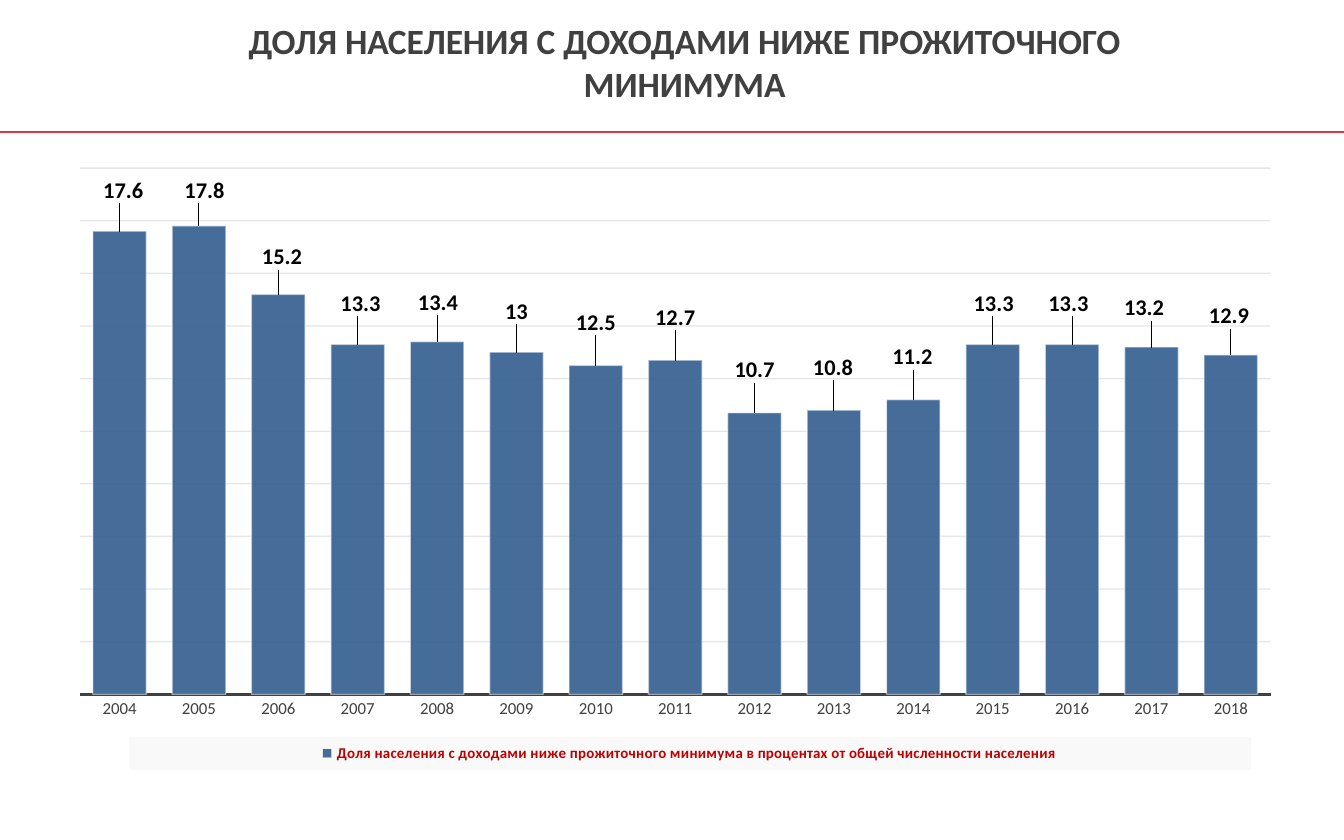
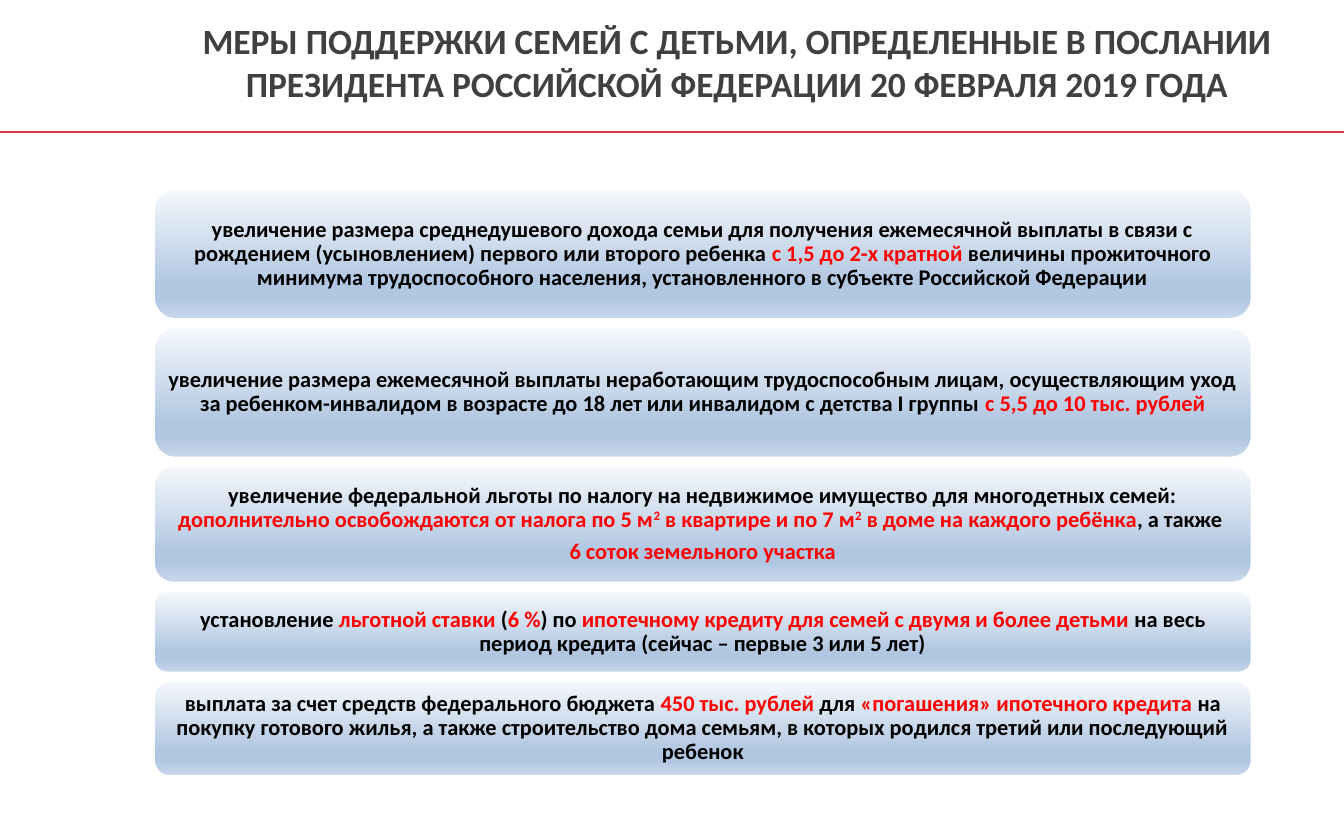
"""Two slides on low incomes and on support for families with children."""
from dataclasses import dataclass

from lxml.etree import SubElement
from pptx import Presentation
from pptx.chart.data import CategoryChartData
from pptx.dml.color import RGBColor
from pptx.enum.chart import XL_CHART_TYPE, XL_LABEL_POSITION, XL_LEGEND_POSITION, XL_TICK_MARK
from pptx.enum.shapes import MSO_CONNECTOR, MSO_SHAPE
from pptx.enum.text import MSO_ANCHOR, PP_ALIGN
from pptx.oxml import parse_xml
from pptx.oxml.ns import nsdecls, qn
from pptx.util import Pt

INCOME_TITLE = "ДОЛЯ НАСЕЛЕНИЯ С ДОХОДАМИ НИЖЕ ПРОЖИТОЧНОГО МИНИМУМА"
INCOME_SERIES = "Доля населения с доходами ниже прожиточного минимума в процентах от общей численности населения"
FIRST_YEAR = 2004
SHARES = [17.6, 17.8, 15.2, 13.3, 13.4, 13, 12.5, 12.7, 10.7, 10.8, 11.2, 13.3, 13.3, 13.2, 12.9]
LABEL_NUDGES = [
    (2, -12), (3, -9), (2, -10), (1.5, -12), (0.5, -11),
    (0, -12), (0, -13), (0, -13), (0, -13), (-0.5, -13),
    (-0.5, -13), (0.5, -12), (-2, -12), (-4, -11), (-1, -11),
]

MEASURES_TITLE = (
    "МЕРЫ ПОДДЕРЖКИ СЕМЕЙ С ДЕТЬМИ, ОПРЕДЕЛЕННЫЕ В ПОСЛАНИИ "
    "ПРЕЗИДЕНТА РОССИЙСКОЙ ФЕДЕРАЦИИ 20 ФЕВРАЛЯ 2019 ГОДА"
)
MEASURES = [
    (70.6, [[
        ("plain", "увеличение размера среднедушевого дохода семьи для получения ежемесячной выплаты "
                  "в связи с рождением (усыновлением) первого или второго ребенка "),
        ("key", "с 1,5 до 2-х кратной "),
        ("plain", "величины прожиточного минимума трудоспособного населения, "
                  "установленного в субъекте Российской Федерации"),
    ]]),
    (70.6, [[
        ("plain", "увеличение размера ежемесячной выплаты неработающим трудоспособным лицам, осуществляющим "
                  "уход за ребенком-инвалидом в возрасте до 18 лет или инвалидом с детства I группы "),
        ("key", "с 5,5 до 10 тыс. рублей"),
    ]]),
    (63.4, [
        [
            ("plain", "увеличение федеральной льготы по налогу на недвижимое имущество для многодетных семей: "),
            ("key", "дополнительно освобождаются от налога по 5 м"),
            ("power", "2"),
            ("key", " в квартире и по 7 м"),
            ("power", "2"),
            ("key", " в доме на каждого ребёнка"),
            ("plain", ", а также "),
        ],
        [("key", "6 соток земельного участка")],
    ]),
    (44.6, [[
        ("plain", "установление "),
        ("key", "льготной ставки "),
        ("plain", "("),
        ("key", "6 %"),
        ("plain", ") по "),
        ("key", "ипотечному кредиту для семей с двумя и более детьми "),
        ("plain", "на весь период кредита (сейчас – первые 3 или 5 лет)"),
    ]]),
    (51.8, [[
        ("plain", "выплата за счет средств федерального бюджета "),
        ("key", "450 тыс. рублей "),
        ("plain", "для "),
        ("key", "«погашения» ипотечного кредита "),
        ("plain", "на покупку готового жилья, а также строительство дома семьям, "
                  "в которых родился третий или последующий ребенок"),
    ]]),
]


@dataclass(frozen=True)
class Theme:
    font: str = "Calibri"
    title_size: float = 19
    body_size: float = 12
    chart_size: float = 10
    axis_size: float = 9
    legend_size: float = 8
    dark: str = "404040"
    black: str = "000000"
    white: str = "FFFFFF"
    rule: str = "DB3941"
    key: str = "FF0000"
    bar: str = "376092"
    grid: str = "0D0D0D"
    legend: str = "C00000"
    legend_band: str = "F9F9F9"
    card_stops: tuple = ((0, "F6F9FC"), (74, "B0C6E1"), (83, "B0C6E1"), (100, "CAD9EB"))


THEME = Theme()
SLIDE_WIDTH, SLIDE_HEIGHT = 720, 450
RULE_Y = 70.6
CHART_BOX = (29.5, 83.5, 664.5, 329)
CARD_LEFT, CARD_TOP, CARD_WIDTH, CARD_GAP = 82, 100.8, 589, 3.6


def apply(target, values):
    for name, value in values.items():
        setattr(target, name, value)


def style_font(font, size, color, bold=False):
    apply(font, {"name": THEME.font, "size": Pt(size), "bold": bold})
    font.color.rgb = RGBColor.from_string(color)


def style_line(line, color, width):
    line.color.rgb = RGBColor.from_string(color)
    line.width = Pt(width)


def style_frame(frame, side, edge):
    apply(frame, {
        "word_wrap": True, "vertical_anchor": MSO_ANCHOR.MIDDLE,
        "margin_left": Pt(side), "margin_right": Pt(side),
        "margin_top": Pt(edge), "margin_bottom": Pt(edge),
    })


def add_titled_slide(deck, title, title_width):
    slide = deck.slides.add_slide(deck.slide_layouts[6])
    heading = slide.shapes.add_textbox(Pt(95), Pt(10), Pt(title_width), Pt(46)).text_frame
    style_frame(heading, 0, 0)
    paragraph = heading.paragraphs[0]
    paragraph.alignment = PP_ALIGN.CENTER
    run = paragraph.add_run()
    run.text = title
    style_font(run.font, THEME.title_size, THEME.dark, True)
    rule = slide.shapes.add_connector(MSO_CONNECTOR.STRAIGHT, 0, Pt(RULE_Y), Pt(SLIDE_WIDTH), Pt(RULE_Y))
    style_line(rule.line, THEME.rule, 1.25)
    SubElement(rule._element.spPr, qn("a:effectLst"))
    return slide


def make_layout(values):
    parts = "".join(f'<c:{name} val="{value}"/>' for name, value in values.items())
    return parse_xml(f'<c:layout {nsdecls("c")}><c:manualLayout>{parts}</c:manualLayout></c:layout>')


def place(parent, index, x, y, width, height, **extra):
    for old in parent.findall(qn("c:layout")):
        parent.remove(old)
    parent.insert(index, make_layout({
        **extra, "xMode": "edge", "yMode": "edge", "x": x, "y": y, "w": width, "h": height,
    }))


def set_opacity(chart, where, percent):
    for color in chart._chartSpace.xpath(where + "//a:srgbClr"):
        SubElement(color, qn("a:alpha")).set("val", str(percent * 1000))


def style_axes(chart):
    years, shares = chart.category_axis, chart.value_axis
    years.major_tick_mark = XL_TICK_MARK.NONE
    style_font(years.tick_labels.font, THEME.axis_size, THEME.dark)
    style_line(years.format.line, THEME.dark, 1.5)
    apply(shares, {
        "visible": False, "has_major_gridlines": True,
        "minimum_scale": 0, "maximum_scale": 20, "major_unit": 2,
    })
    style_line(shares.major_gridlines.format.line, THEME.grid, 0.75)
    set_opacity(chart, "//c:majorGridlines", 10)


def style_legend(chart):
    chart.has_legend = True
    legend = chart.legend
    apply(legend, {"position": XL_LEGEND_POSITION.BOTTOM, "include_in_layout": False})
    style_font(legend.font, THEME.legend_size, THEME.legend, True)
    element = legend._element
    place(element, 1, 0.06, 0.946, 0.904, 0.054)
    element.find(qn("c:txPr")).addprevious(parse_xml(
        f'<c:spPr {nsdecls("c", "a")}><a:solidFill><a:srgbClr val="{THEME.legend_band}"/></a:solidFill></c:spPr>'
    ))


def style_labels(series):
    labels = series.data_labels
    apply(labels, {
        "show_value": True, "number_format": "General", "number_format_is_linked": False,
        "position": XL_LABEL_POSITION.OUTSIDE_END,
    })
    style_font(labels.font, THEME.body_size, THEME.black, True)
    for index, (dx, dy) in enumerate(LABEL_NUDGES):
        label = series.points[index].data_label
        style_font(label.font, THEME.body_size, THEME.black, True)
        label.position = XL_LABEL_POSITION.OUTSIDE_END
        position = series._element.xpath(f'c:dLbls/c:dLbl/c:idx[@val="{index}"]')[0]
        position.addnext(make_layout({"x": round(dx / CHART_BOX[2], 4), "y": round(dy / CHART_BOX[3], 4)}))


def add_income_chart(slide):
    data = CategoryChartData()
    data.categories = [str(FIRST_YEAR + index) for index in range(len(SHARES))]
    data.add_series(INCOME_SERIES, SHARES)
    chart = slide.shapes.add_chart(XL_CHART_TYPE.COLUMN_CLUSTERED, *map(Pt, CHART_BOX), data).chart
    chart.has_title = False
    style_font(chart.font, THEME.chart_size, THEME.black)
    apply(chart.plots[0], {"gap_width": 48, "vary_by_categories": False})
    series = chart.plots[0].series[0]
    series.format.fill.solid()
    series.format.fill.fore_color.rgb = RGBColor.from_string(THEME.bar)
    style_line(series.format.line, THEME.white, 0.75)
    set_opacity(chart, "//c:ser/c:spPr/a:solidFill", 92)
    set_opacity(chart, "//c:ser/c:spPr/a:ln", 50)
    style_axes(chart)
    style_legend(chart)
    style_labels(series)
    place(chart._chartSpace.xpath("//c:plotArea")[0], 0, 0.02, 0.02, 0.96, 0.857, layoutTarget="inner")


def fill_card(card):
    card.fill.gradient()
    card.fill.gradient_angle = 270
    stops = card._element.xpath(".//a:gsLst")[0]
    for stop in list(stops):
        stops.remove(stop)
    for percent, color in THEME.card_stops:
        stop = SubElement(stops, qn("a:gs"), pos=str(percent * 1000))
        SubElement(stop, qn("a:srgbClr"), val=color)


def write_measure(frame, paragraphs):
    style_frame(frame, 3.6, 2.2)
    for index, parts in enumerate(paragraphs):
        paragraph = frame.add_paragraph() if index else frame.paragraphs[0]
        apply(paragraph, {"alignment": PP_ALIGN.CENTER, "line_spacing": 0.9, "space_after": Pt(4.2)})
        for kind, text in parts:
            run = paragraph.add_run()
            run.text = text
            style_font(run.font, THEME.body_size, THEME.black if kind == "plain" else THEME.key, True)
            if kind == "power":
                run._r.get_or_add_rPr().set("baseline", "30000")


def add_measures(slide):
    top = CARD_TOP
    for height, paragraphs in MEASURES:
        card = slide.shapes.add_shape(
            MSO_SHAPE.ROUNDED_RECTANGLE, Pt(CARD_LEFT), Pt(top), Pt(CARD_WIDTH), Pt(height))
        card.shadow.inherit = False
        fill_card(card)
        style_line(card.line, THEME.white, 2)
        write_measure(card.text_frame, paragraphs)
        top += height + CARD_GAP


def main():
    deck = Presentation()
    apply(deck, {"slide_width": Pt(SLIDE_WIDTH), "slide_height": Pt(SLIDE_HEIGHT)})
    add_income_chart(add_titled_slide(deck, INCOME_TITLE, 543.6))
    add_measures(add_titled_slide(deck, MEASURES_TITLE, 599.8))
    deck.save("out.pptx")


if __name__ == "__main__":
    main()
